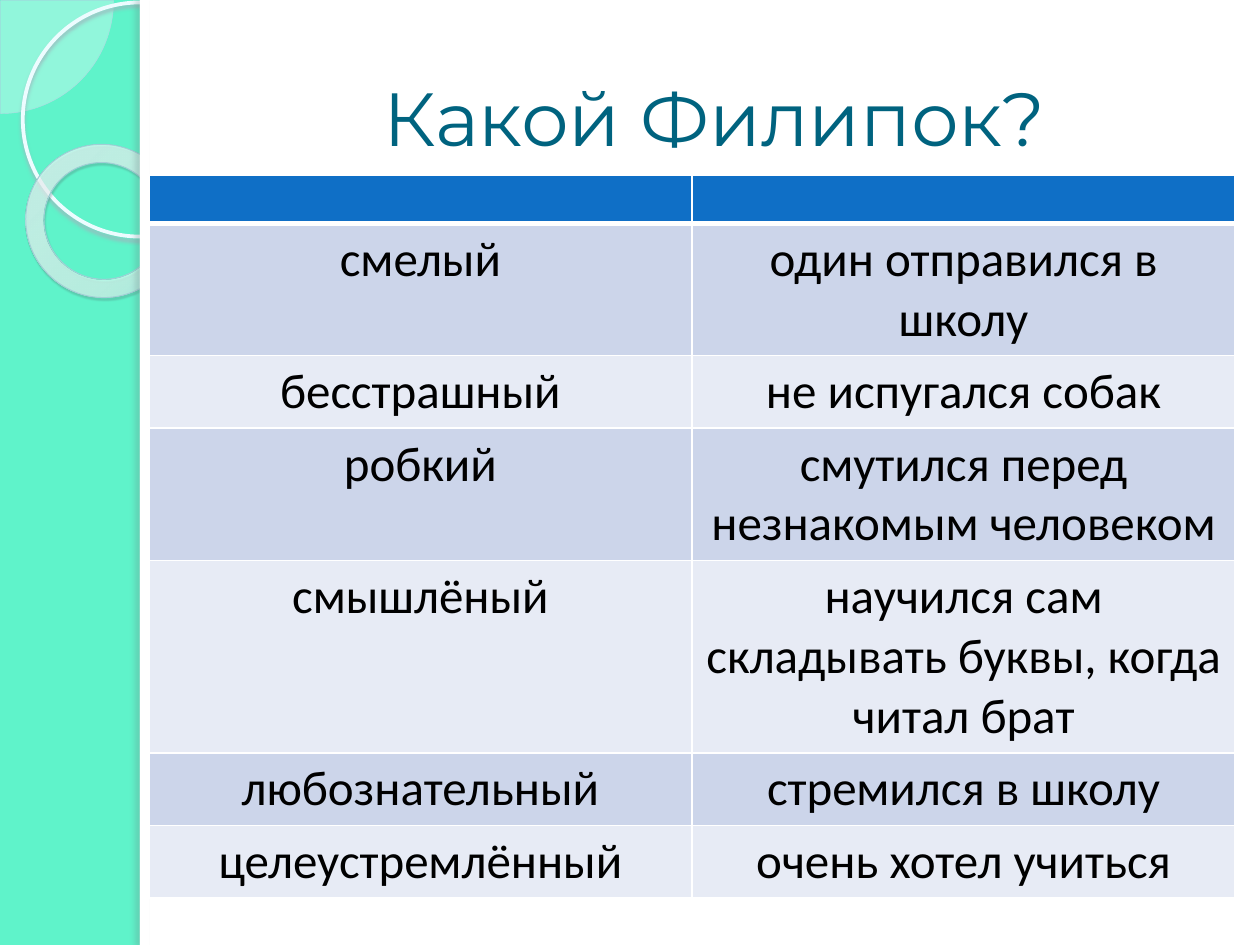
from pptx import Presentation
from pptx.dml.color import RGBColor
from pptx.enum.shapes import MSO_SHAPE as Shape
from pptx.enum.text import MSO_ANCHOR, PP_ALIGN
from pptx.oxml import parse_xml
from pptx.oxml.ns import nsdecls, qn
from pptx.util import Cm, Pt

COLORS = {
    "mint": "5FF3CA", "white": "FFFFFF", "title": "00637F", "text": "000000",
    "header": "0F6FC6", "odd": "CCD5EA", "even": "E7EBF5",
    "pie": "F8FEFF", "pie line": "AFDBE2",
    "ring": "EDFCFF", "ring shadow": "9CB9BE",
    "donut line": "A1CFD6", "donut shadow": "4B5E61", "panel shadow": "6C7A7C",
}
TRAITS = [
    ("смелый", "один отправился в школу"),
    ("бесстрашный", "не испугался собак"),
    ("робкий", "смутился перед незнакомым человеком"),
    ("смышлёный", "научился сам складывать буквы, когда читал брат"),
    ("любознательный", "стремился в школу"),
    ("целеустремлённый", "очень хотел учиться"),
]
ROW_HEIGHTS = [0.97, 2.49, 1.37, 2.49, 3.61, 1.37, 1.37]
# kind, box in cm, fill, line (colour, points), shadow (colour, opacity %, blur, distance, angle)
DECORATIONS = [
    (Shape.PIE, (-2.26, -2.26, 4.55, 4.55), "pie", ("pie line", 0.25), None),
    (Shape.OVAL, (0.46, 0.05, 4.72, 4.72), None, ("ring", 2.15),
     ("ring shadow", 85, 2, 2, 90)),
    (Shape.DONUT, (0.51, 2.92, 3.12, 3.07), None, ("donut line", 0.58),
     ("donut shadow", 35, 1, 1.2, 75)),
    (Shape.RECTANGLE, (2.82, 0, 22.58, 19.05), "white", None, None),
    (Shape.RECTANGLE, (2.82, 0, 0.2, 19.05), "white", None,
     ("panel shadow", 25, 3, 3, 180)),
]
DONUT_STOPS = [(0, "F9FEFF", 70), (70, "FDFFFF", 55), (100, "9EF2FF", 60)]


def rgb(name):
    return RGBColor.from_string(COLORS[name])


def color_xml(value, opacity):
    return f'<a:srgbClr val="{value}"><a:alpha val="{opacity * 1000}"/></a:srgbClr>'


presentation = Presentation()
presentation.slide_width, presentation.slide_height = Cm(25.4), Cm(19.05)
slide = presentation.slides.add_slide(presentation.slide_layouts[5])
slide.background.fill.solid()
slide.background.fill.fore_color.rgb = rgb("mint")

# Side decoration and white panel
for kind, box, fill, line, shadow in DECORATIONS:
    shape = slide.shapes.add_shape(kind, *map(Cm, box))
    properties = shape._element.spPr
    if fill:
        shape.fill.solid()
        shape.fill.fore_color.rgb = rgb(fill)
    else:
        shape.fill.background()
    if line:
        shape.line.color.rgb = rgb(line[0])
        shape.line.width = Pt(line[1])
    else:
        shape.line.fill.background()
    shape.shadow.inherit = False
    if shadow:
        name, opacity, blur, distance, angle = shadow
        properties.find(qn("a:effectLst")).append(parse_xml(
            f'<a:outerShdw {nsdecls("a")} blurRad="{Pt(blur)}" dist="{Pt(distance)}" '
            f'dir="{angle * 60000}" algn="tl" rotWithShape="0">'
            f'{color_xml(COLORS[name], opacity)}</a:outerShdw>'))
    if kind == Shape.PIE:
        shape.adjustments[0], shape.adjustments[1] = 0, 54
        color = properties.find(qn("a:solidFill")).find(qn("a:srgbClr"))
        color.append(parse_xml(f'<a:alpha {nsdecls("a")} val="33000"/>'))
    elif kind == Shape.DONUT:
        shape.rotation = 38.6
        shape.adjustments[0] = 0.12
        stops = "".join(f'<a:gs pos="{position * 1000}">{color_xml(value, opacity)}</a:gs>'
                        for position, value, opacity in DONUT_STOPS)
        properties.replace(properties.find(qn("a:noFill")), parse_xml(
            f'<a:gradFill {nsdecls("a")}><a:gsLst>{stops}</a:gsLst><a:path path="circle">'
            '<a:fillToRect l="-408000" t="-50000" r="508000" b="150000"/>'
            '</a:path></a:gradFill>'))

# Title, brought in front of the panel
title = slide.shapes.title
title._element.getparent().append(title._element)
title.left, title.top, title.width, title.height = map(Cm, (3.99, 0.76, 20.83, 3.18))
title.text_frame.text = "Какой Филипок?"
title.text_frame.vertical_anchor = MSO_ANCHOR.MIDDLE
paragraph = title.text_frame.paragraphs[0]
paragraph.alignment = PP_ALIGN.CENTER
font = paragraph.runs[0].font
for attribute, value in {"name": "Montserrat", "size": Pt(43)}.items():
    setattr(font, attribute, value)
font.color.rgb = rgb("title")

# Table of traits
table = slide.shapes.add_table(len(ROW_HEIGHTS), 2, Cm(3), Cm(3.53), Cm(21.9),
                               Cm(sum(ROW_HEIGHTS))).table
for column in table.columns:
    column.width = Cm(10.95)
for row_index, (height, texts) in enumerate(zip(ROW_HEIGHTS, [("", "")] + TRAITS)):
    table.rows[row_index].height = Cm(height)
    fill = "header" if row_index == 0 else ("even", "odd")[row_index % 2]
    for column_index, text in enumerate(texts):
        cell = table.cell(row_index, column_index)
        cell.fill.solid()
        cell.fill.fore_color.rgb = rgb(fill)
        widths = {"L": 1, "R": 1, "T": 3 if row_index == 1 else 1,
                  "B": 3 if row_index == 0 else 1}
        for position, (side, width) in enumerate(widths.items()):
            cell._tc.get_or_add_tcPr().insert(position, parse_xml(
                f'<a:ln{side} {nsdecls("a")} w="{Pt(width)}"><a:solidFill>'
                f'<a:srgbClr val="{COLORS["white"]}"/></a:solidFill></a:ln{side}>'))
        paragraph = cell.text_frame.paragraphs[0]
        paragraph.alignment = PP_ALIGN.CENTER
        if text:
            run = paragraph.add_run()
            run.text = text
            for attribute, value in {"name": "Calibri", "size": Pt(28)}.items():
                setattr(run.font, attribute, value)
            run.font.color.rgb = rgb("text")
        else:
            paragraph._p.append(parse_xml(f'<a:endParaRPr {nsdecls("a")} sz="1400"/>'))

presentation.save("out.pptx")
